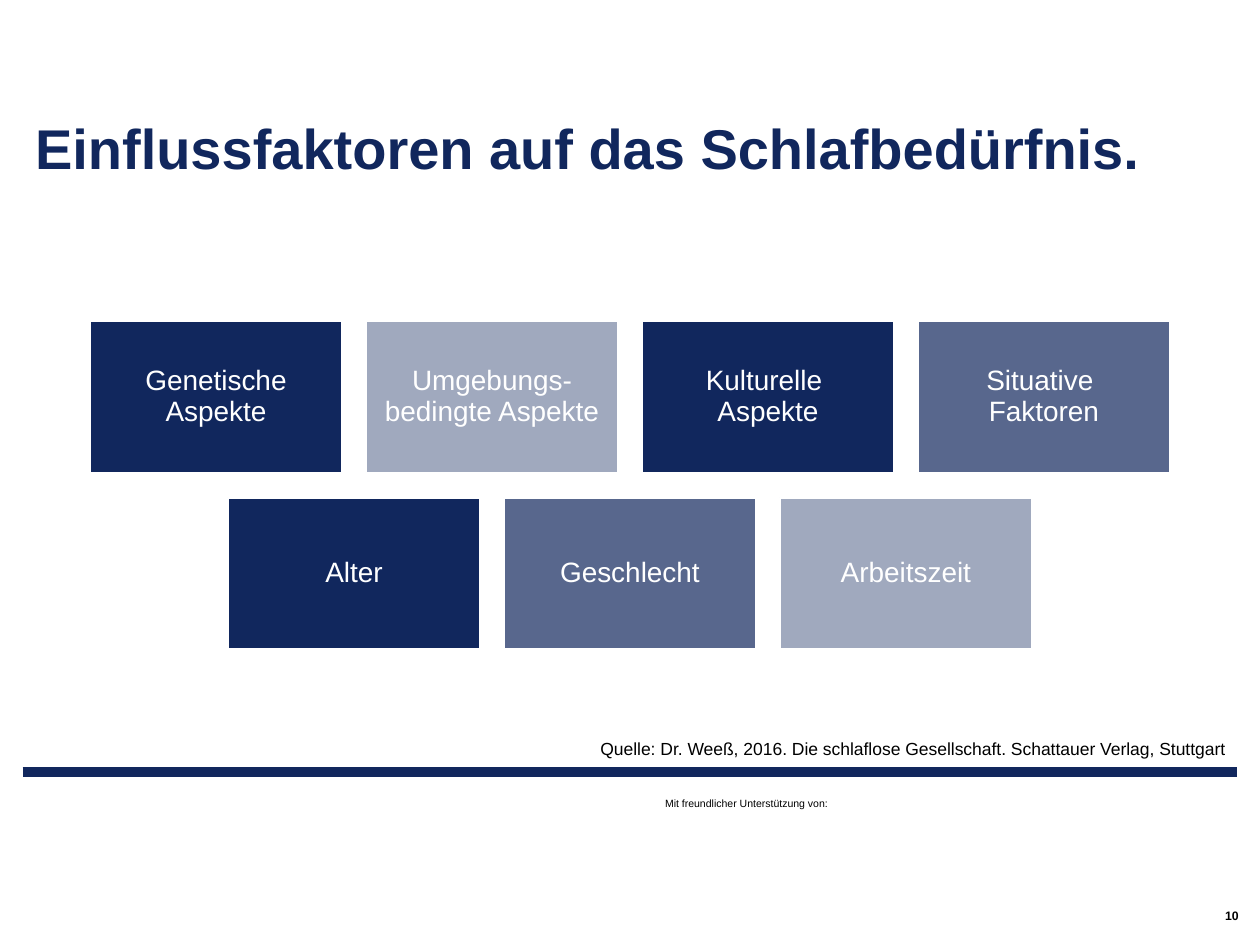
"""Build a slide on the factors that influence how much sleep people need."""
from dataclasses import dataclass

from lxml import etree
from pptx import Presentation
from pptx.dml.color import RGBColor
from pptx.enum import shapes, text
from pptx.oxml import ns
from pptx.util import Inches, Pt


@dataclass(frozen=True)
class Theme:
    font: str = "Arial"
    navy: str = "11275D"
    slate: str = "58678D"
    mist: str = "A0A9BE"
    white: str = "FFFFFF"
    black: str = "000000"
    title: int = 32
    card: int = 16
    source: int = 10
    page: int = 7
    note: int = 6


theme = Theme()


def write(shape, words, size, color, align, anchor, pad, bold=False, lead=None):
    frame = shape.text_frame
    frame.word_wrap = True
    frame.vertical_anchor = anchor
    frame.margin_left = frame.margin_right = Inches(pad[0])
    frame.margin_top = frame.margin_bottom = Inches(pad[1])
    para = frame.paragraphs[0]
    para.text = words
    para.alignment = align
    para.line_spacing = lead
    para.font.name = theme.font
    para.font.size = Pt(size)
    para.font.bold = bold
    para.font.color.rgb = RGBColor.from_string(color)


deck = Presentation()
deck.slide_width, deck.slide_height = Inches(10), Inches(7.5)
slide = deck.slides.add_slide(deck.slide_layouts[6])
left, mid, right = text.PP_ALIGN.LEFT, text.PP_ALIGN.CENTER, text.PP_ALIGN.RIGHT
top, center, base = text.MSO_ANCHOR.TOP, text.MSO_ANCHOR.MIDDLE, text.MSO_ANCHOR.BOTTOM

rule = slide.shapes.add_connector(
    shapes.MSO_CONNECTOR.STRAIGHT, Inches(0.18), Inches(6.13), Inches(9.82), Inches(6.13))
rule.line.color.rgb = RGBColor.from_string(theme.navy)
rule.line.width = Pt(5.67)
etree.SubElement(rule._element.spPr, ns.qn("a:effectLst"))

labels = [
    ((0.18, 0.39, 9.65, 1.05), "Einflussfaktoren auf das Schlafbedürfnis.",
     theme.title, theme.navy, left, base, (0.1, 0), True, 0.9),
    ((5.18, 6.28, 2.03, 0.2), "Mit freundlicher Unterstützung von:",
     theme.note, theme.black, left, top, (0.1, 0.05)),
    ((3.69, 5.81, 6.13, 0.27),
     "Quelle: Dr. Weeß, 2016. Die schlaflose Gesellschaft. Schattauer Verlag, Stuttgart",
     theme.source, theme.black, right, top, (0.1, 0.05)),
    ((6.45, 7.19, 3.38, 0.16), "10",
     theme.page, theme.black, right, center, (0, 0), True),
]
for place, *style in labels:
    box = slide.shapes.add_textbox(*map(Inches, place))
    write(box, *style)

rows = [
    [("Genetische Aspekte", theme.navy), ("Umgebungs-bedingte Aspekte", theme.mist),
     ("Kulturelle \vAspekte", theme.navy), ("Situative \vFaktoren", theme.slate)],
    [("Alter", theme.navy), ("Geschlecht", theme.slate), ("Arbeitszeit", theme.mist)],
]
width, height, step, drop = 2, 1.2, 2.19, 1.4
for line, row in enumerate(rows):
    start = 5 - (step * (len(row) - 1) + width) / 2
    for col, (words, fill) in enumerate(row):
        card = slide.shapes.add_shape(
            shapes.MSO_SHAPE.RECTANGLE, Inches(start + col * step),
            Inches(2.55 + line * drop), Inches(width), Inches(height))
        card.shadow.inherit = False
        card.fill.solid()
        card.fill.fore_color.rgb = RGBColor.from_string(fill)
        card.line.color.rgb = RGBColor.from_string(theme.white)
        card.line.width = Pt(1)
        write(card, words, theme.card, theme.white, mid, center, (0.07, 0.07), lead=0.9)

deck.save("out.pptx")
